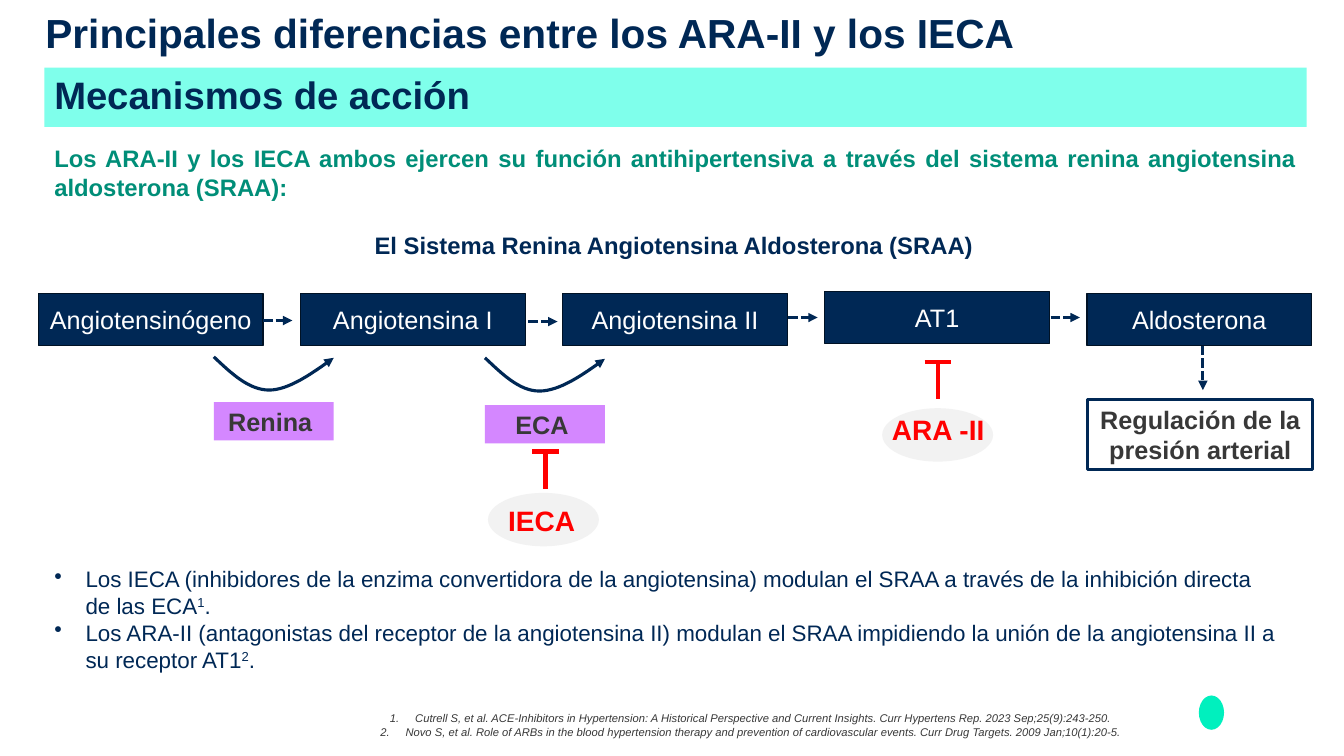
from dataclasses import dataclass

from lxml.etree import SubElement
from pptx import Presentation
from pptx.dml.color import RGBColor
from pptx.enum.dml import MSO_LINE
from pptx.enum.shapes import MSO_CONNECTOR, MSO_SHAPE
from pptx.enum.text import MSO_ANCHOR, PP_ALIGN
from pptx.oxml.ns import qn
from pptx.util import Inches, Pt


@dataclass(frozen=True)
class Theme:
    font: str = "Arial"
    navy: str = "002855"
    navy_edge: str = "001225"
    mint: str = "7FFFEB"
    bright_mint: str = "00F0BE"
    green: str = "008E78"
    violet: str = "D487FF"
    gray: str = "F2F2F2"
    ink: str = "383838"
    red: str = "FF0000"
    white: str = "FFFFFF"
    title: float = 29
    heading: float = 27.3
    lead: float = 17
    body: float = 16
    label: float = 18
    drug: float = 20
    note: float = 8


@dataclass(frozen=True)
class Frame:
    left: float
    top: float
    width: float
    height: float

    def lengths(self):
        return [Inches(n) for n in (self.left, self.top, self.width, self.height)]


@dataclass(frozen=True)
class Step:
    text: str
    column: int
    top: float = 2.91


@dataclass(frozen=True)
class Enzyme:
    text: str
    left: float
    top: float
    curve: tuple


@dataclass(frozen=True)
class Inhibitor:
    text: str
    text_frame: Frame
    oval: Frame
    stem_x: float
    stem_top: float


@dataclass(frozen=True)
class Arrow:
    start: tuple
    end: tuple


THEME = Theme()
STEP_LEFT, STEP_PITCH, STEP_WIDTH, STEP_HEIGHT = 0.38, 2.6, 2.23, 0.52
ENZYME_WIDTH, ENZYME_HEIGHT = 1.19, 0.38

STEPS = [
    Step("Angiotensinógeno", 0),
    Step("Angiotensina I", 1),
    Step("Angiotensina II", 2),
    Step("AT1", 3, top=2.89),
    Step("Aldosterona", 4),
]
ENZYMES = [
    Enzyme("Renina ", 2.12, 3.99, (
        ((2.12, 3.54), (2.3, 3.71), (2.47, 3.87), (2.67, 3.87)),
        ((2.67, 3.87), (2.86, 3.87), (3.09, 3.71), (3.31, 3.55)))),
    Enzyme("ECA ", 4.81, 4.02, (
        ((4.81, 3.55), (4.98, 3.71), (5.15, 3.88), (5.35, 3.88)),
        ((5.35, 3.88), (5.55, 3.88), (5.78, 3.72), (6, 3.56)))),
]
INHIBITORS = [
    Inhibitor("IECA ", Frame(4.81, 4.97, 1.19, 0.38), Frame(4.84, 4.89, 1.1, 0.53), 5.41, 4.48),
    Inhibitor("ARA -II", Frame(8.71, 4.07, 1.19, 0.38), Frame(8.75, 4.05, 1.1, 0.53), 9.3, 3.59),
]
ARROWS = [
    Arrow((2.61, 3.18), (2.9, 3.18)),
    Arrow((5.24, 3.19), (5.53, 3.19)),
    Arrow((7.82, 3.15), (8.11, 3.15)),
    Arrow((10.42, 3.15), (10.71, 3.15)),
    Arrow((11.93, 3.43), (11.93, 3.87)),
]
MECHANISMS = [
    "Los IECA (inhibidores de la enzima convertidora de la angiotensina) modulan el SRAA "
    "a través de la inhibición directa de las ECA^1^.",
    "Los ARA-II (antagonistas del receptor de la angiotensina II) modulan el SRAA impidiendo "
    "la unión de la angiotensina II a su receptor AT1^2^.",
]
REFERENCES = [
    "Cutrell S, et al. ACE-Inhibitors in Hypertension: A Historical Perspective and Current "
    "Insights. Curr Hypertens Rep. 2023 Sep;25(9):243-250. ",
    "Novo S, et al. Role of ARBs in the blood hypertension therapy and prevention of "
    "cardiovascular events. Curr Drug Targets. 2009 Jan;10(1):20-5. ",
]


def color(code: str) -> RGBColor:
    return RGBColor.from_string(code)


def write(box, *paragraphs: str, size: float, ink: str, bold=False, italic=False,
          align=PP_ALIGN.LEFT, anchor=MSO_ANCHOR.MIDDLE, spacing=None, margin=None,
          marker=None, hanging=0.0):
    """Fill a box with text; carets enclose superscripts, marker is a (tag, attributes) bullet."""
    frame = box.text_frame
    frame.word_wrap = True
    frame.vertical_anchor = anchor
    if margin is not None:
        frame.margin_left = frame.margin_right = Inches(margin)
        frame.margin_top = frame.margin_bottom = Inches(margin)
    for index, text in enumerate(paragraphs):
        para = frame.paragraphs[0] if index == 0 else frame.add_paragraph()
        para.alignment = align
        if spacing:
            para.line_spacing = spacing
        if marker:
            properties = para._p.get_or_add_pPr()
            properties.set("marL", str(Inches(hanging)))
            properties.set("indent", str(-Inches(hanging)))
            tag, attributes = marker
            SubElement(properties, qn(tag), attributes)
        for position, piece in enumerate(text.split("^")):
            span = para.add_run()
            span.text = piece
            font = span.font
            font.name, font.size = THEME.font, Pt(size)
            font.bold, font.italic = bold, italic
            font.color.rgb = color(ink)
            if position % 2:
                span._r.get_or_add_rPr().set("baseline", "30000")


def add_box(page, frame: Frame, fill=None, edge=None, weight=1.0, kind=MSO_SHAPE.RECTANGLE):
    box = page.shapes.add_shape(kind, *frame.lengths())
    box.shadow.inherit = False
    if fill:
        box.fill.solid()
        box.fill.fore_color.rgb = color(fill)
    else:
        box.fill.background()
    if edge:
        box.line.color.rgb = color(edge)
        box.line.width = Pt(weight)
    else:
        box.line.fill.background()
    return box


def style_line(shape, ink: str, weight: float, arrow=False):
    shape.line.color.rgb = color(ink)
    shape.line.width = Pt(weight)
    if arrow:
        SubElement(shape.line._get_or_add_ln(), qn("a:tailEnd"), {"type": "triangle"})


def add_line(page, start: tuple, end: tuple, ink: str, weight: float, dashed_arrow=False):
    points = [Inches(n) for n in (*start, *end)]
    line = page.shapes.add_connector(MSO_CONNECTOR.STRAIGHT, *points)
    if dashed_arrow:
        line.line.dash_style = MSO_LINE.SQUARE_DOT
    style_line(line, ink, weight, dashed_arrow)
    SubElement(line._element.spPr, qn("a:effectLst"))


def bezier_point(controls: tuple, t: float) -> tuple:
    weights = ((1 - t) ** 3, 3 * t * (1 - t) ** 2, 3 * t * t * (1 - t), t ** 3)
    return tuple(Inches(sum(w * point[axis] for w, point in zip(weights, controls)))
                 for axis in (0, 1))


def add_curve(page, curve: tuple, steps=16):
    points = [bezier_point(part, n / steps) for part in curve for n in range(1, steps + 1)]
    builder = page.shapes.build_freeform(*bezier_point(curve[0], 0))
    builder.add_line_segments(points, close=False)
    shape = builder.convert_to_shape()
    shape.shadow.inherit = False
    shape.fill.background()
    style_line(shape, THEME.navy, 2.25, arrow=True)


def add_pathway(page):
    for step in STEPS:
        frame = Frame(STEP_LEFT + STEP_PITCH * step.column, step.top, STEP_WIDTH, STEP_HEIGHT)
        write(add_box(page, frame, THEME.navy, THEME.navy_edge), step.text,
              size=THEME.label, ink=THEME.white, align=PP_ALIGN.CENTER)
    for enzyme in ENZYMES:
        add_curve(page, enzyme.curve)
        frame = Frame(enzyme.left, enzyme.top, ENZYME_WIDTH, ENZYME_HEIGHT)
        write(add_box(page, frame, THEME.violet), enzyme.text,
              size=THEME.label, ink=THEME.ink, bold=True, align=PP_ALIGN.CENTER)
    for arrow in ARROWS:
        add_line(page, arrow.start, arrow.end, THEME.navy, 2.25, dashed_arrow=True)
    outcome = add_box(page, Frame(10.79, 3.96, STEP_WIDTH, 0.7), edge=THEME.navy, weight=2.25)
    write(outcome, "Regulación de la presión arterial", size=THEME.label, ink=THEME.ink,
          bold=True, align=PP_ALIGN.CENTER)
    for drug in INHIBITORS:
        x, y = drug.stem_x, drug.stem_top
        add_line(page, (x, y), (x, y + 0.37), THEME.red, 3)
        add_line(page, (x - 0.13, y), (x + 0.13, y), THEME.red, 3)
        add_box(page, drug.oval, THEME.gray, kind=MSO_SHAPE.OVAL)
        write(page.shapes.add_textbox(*drug.text_frame.lengths()), drug.text,
              size=THEME.drug, ink=THEME.red, bold=True, align=PP_ALIGN.CENTER)


def main():
    deck = Presentation()
    deck.slide_width, deck.slide_height = Inches(13.33), Inches(7.5)
    page = deck.slides.add_slide(deck.slide_layouts[6])

    add_box(page, Frame(11.89, 6.9, 0.25, 0.34), THEME.bright_mint, kind=MSO_SHAPE.OVAL)
    write(add_box(page, Frame(0.44, 0.67, 12.52, 0.59), THEME.mint), "Mecanismos de acción",
          size=THEME.heading, ink=THEME.navy, bold=True, spacing=0.9)
    write(page.shapes.add_textbox(*Frame(0.45, -0.02, 11.5, 0.68).lengths()),
          "Principales diferencias entre los ARA-II y los IECA",
          size=THEME.title, ink=THEME.navy, bold=True, margin=0)
    write(page.shapes.add_textbox(*Frame(2.68, 2.24, 8.01, 0.39).lengths()),
          "El Sistema Renina Angiotensina Aldosterona (SRAA)", size=THEME.lead,
          ink=THEME.navy, bold=True, align=PP_ALIGN.CENTER, anchor=MSO_ANCHOR.TOP)
    write(add_box(page, Frame(0.44, 1.38, 12.52, 0.67), THEME.white),
          "Los ARA-II y los IECA ambos ejercen su función antihipertensiva a través del "
          "sistema renina angiotensina aldosterona (SRAA):", size=THEME.lead,
          ink=THEME.green, bold=True, align=PP_ALIGN.JUSTIFY, anchor=MSO_ANCHOR.TOP)
    write(add_box(page, Frame(0.44, 5.56, 12.33, 1.18), THEME.white), *MECHANISMS,
          size=THEME.body, ink=THEME.navy, anchor=MSO_ANCHOR.TOP,
          marker=("a:buChar", {"char": "•"}), hanging=0.31)
    add_pathway(page)
    write(add_box(page, Frame(3.64, 7.01, 7.65, 0.37), THEME.white), *REFERENCES,
          size=THEME.note, ink=THEME.ink, italic=True, align=PP_ALIGN.CENTER,
          anchor=MSO_ANCHOR.TOP, marker=("a:buAutoNum", {"type": "arabicPeriod"}), hanging=0.25)
    deck.save("out.pptx")


if __name__ == "__main__":
    main()
